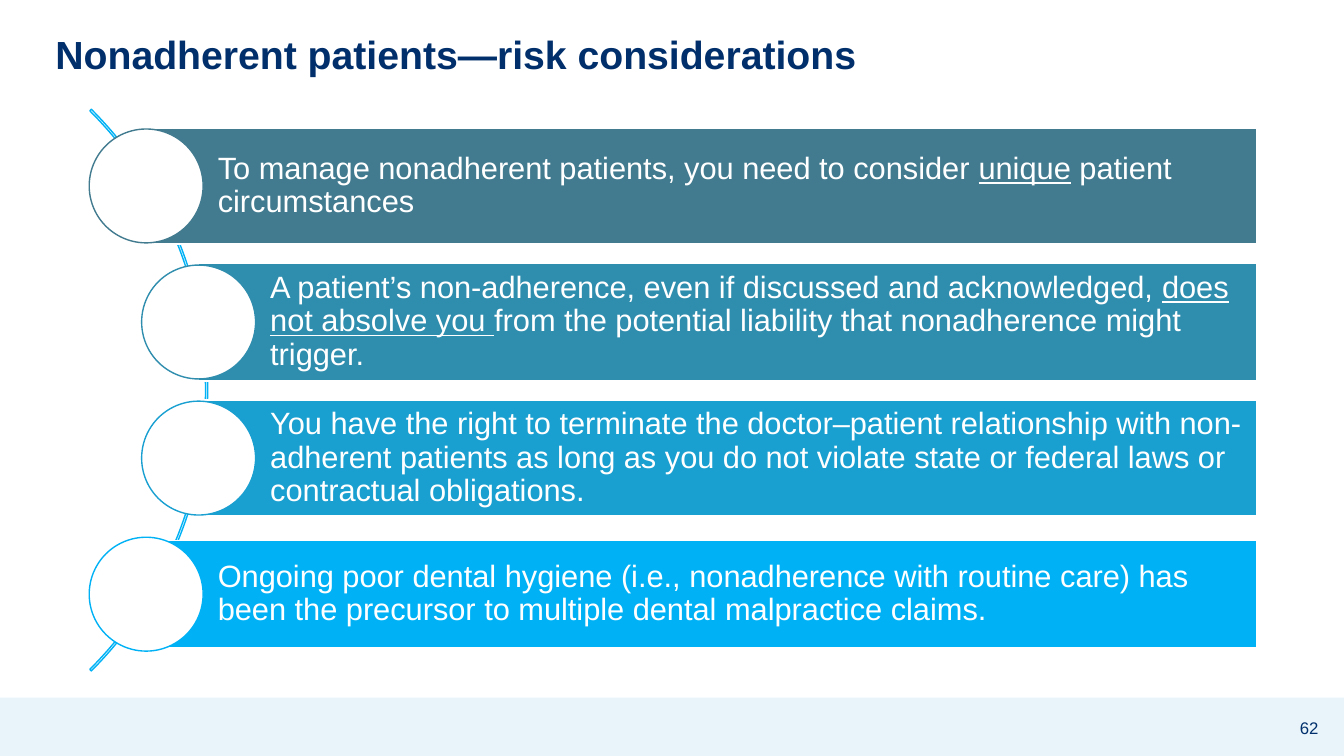
from pptx import Presentation
from pptx.dml.color import RGBColor
from pptx.enum.shapes import MSO_SHAPE as Shape
from pptx.enum.text import MSO_ANCHOR as Anchor, MSO_AUTO_SIZE as AutoSize, PP_ALIGN as Align
from pptx.util import Inches, Pt

NAVY, WHITE, PALE, SKY = "002F6B", "FFFFFF", "E8F4FA", "00B2F5"
CIRCLE_SIZE = 1.13
FIRST_CENTER, PITCH = 1.845, 1.35

# Bar left, bar height, colour, and text spans as (words, underlined)
CONSIDERATIONS = [
    (1.45, 1.15, "427B8F", [
        ("To manage nonadherent patients, you need to consider ", False),
        ("unique", True),
        (" patient circumstances", False)]),
    (1.97, 1.17, "2F8DAE", [
        ("A patient’s non-adherence, even if discussed and acknowledged, ", False),
        ("does not absolve you ", True),
        ("from the potential liability that nonadherence might trigger.", False)]),
    (1.97, 1.15, "199FD0", [
        ("You have the right to terminate the doctor–patient relationship with "
         "non-adherent patients as long as you do not violate state or federal "
         "laws or contractual obligations.", False)]),
    (1.45, 1.07, SKY, [
        ("Ongoing poor dental hygiene (i.e., nonadherence with routine care) has "
         "been the precursor to multiple dental malpractice claims.", False)]),
]


def color(value):
    return RGBColor.from_string(value)


def style_font(font, size, value, bold=False):
    font.name = "Arial"
    font.size = Pt(size)
    font.bold = bold
    font.color.rgb = color(value)


def add_shape(page, kind, box, fill=None, line=None):
    shape = page.shapes.add_shape(kind, *map(Inches, box))
    shape.shadow.inherit = False
    if fill:
        shape.fill.solid()
        shape.fill.fore_color.rgb = color(fill)
    else:
        shape.fill.background()
    if line:
        shape.line.color.rgb = color(line)
        shape.line.width = Pt(1)
    else:
        shape.line.fill.background()
    return shape


def add_title(page, box, words):
    title = page.shapes.title
    title.left, title.top, title.width, title.height = map(Inches, box)
    frame = title.text_frame
    frame.auto_size = AutoSize.NONE
    frame.vertical_anchor = Anchor.MIDDLE
    para = frame.paragraphs[0]
    para.text = words
    para.alignment = Align.LEFT
    para.line_spacing = 0.9
    style_font(para.font, 28, NAVY, bold=True)


def add_footer(page, box, number):
    left, top, width, height = box
    add_shape(page, Shape.RECTANGLE, box, PALE)
    number_box = page.shapes.add_textbox(
        Inches(left + width - 0.65), Inches(top + 0.1), Inches(0.61), Inches(0.4))
    frame = number_box.text_frame
    frame.word_wrap = True
    frame.vertical_anchor = Anchor.MIDDLE
    para = frame.paragraphs[0]
    para.text = number
    para.alignment = Align.CENTER
    style_font(para.font, 12, NAVY)


def add_arc(page, box):
    arc = add_shape(page, Shape.BLOCK_ARC, box, line=SKY)
    for index, value in enumerate((189, 27, 0.00274)):
        arc.adjustments[index] = value


def add_consideration(page, box, fill, spans):
    """Draw a bar with its text and a circle centred on the bar's left edge."""
    left, top, width, height = box
    bar = add_shape(page, Shape.RECTANGLE, box, fill, WHITE)
    frame = bar.text_frame
    frame.word_wrap = True
    frame.vertical_anchor = Anchor.MIDDLE
    frame.margin_left = Inches(0.71)
    frame.margin_top = frame.margin_right = frame.margin_bottom = Inches(0.06)
    para = frame.paragraphs[0]
    para.alignment = Align.LEFT
    para.line_spacing = 0.9
    style_font(para.font, 22, WHITE)
    for words, underlined in spans:
        span = para.add_run()
        span.text = words
        if underlined:
            span.font.underline = True
    radius = CIRCLE_SIZE / 2
    circle_box = (left - radius, top + height / 2 - radius, CIRCLE_SIZE, CIRCLE_SIZE)
    add_shape(page, Shape.OVAL, circle_box, WHITE, fill)


def add_considerations(page, right):
    add_arc(page, (-5.82, -0.07, 7.88, 7.88))
    for index, (left, height, fill, spans) in enumerate(CONSIDERATIONS):
        top = FIRST_CENTER + index * PITCH - height / 2
        add_consideration(page, (left, top, right - left, height), fill, spans)


def main():
    deck = Presentation()
    deck.slide_width, deck.slide_height = Inches(13.33), Inches(7.5)
    page = deck.slides.add_slide(deck.slide_layouts.get_by_name("Title Only"))
    add_footer(page, (0, 6.92, 13.33, 0.58), "62")
    add_title(page, (0.45, 0.17, 12.09, 0.78), "Nonadherent patients—risk considerations")
    add_considerations(page, right=12.46)
    deck.save("out.pptx")


if __name__ == "__main__":
    main()
